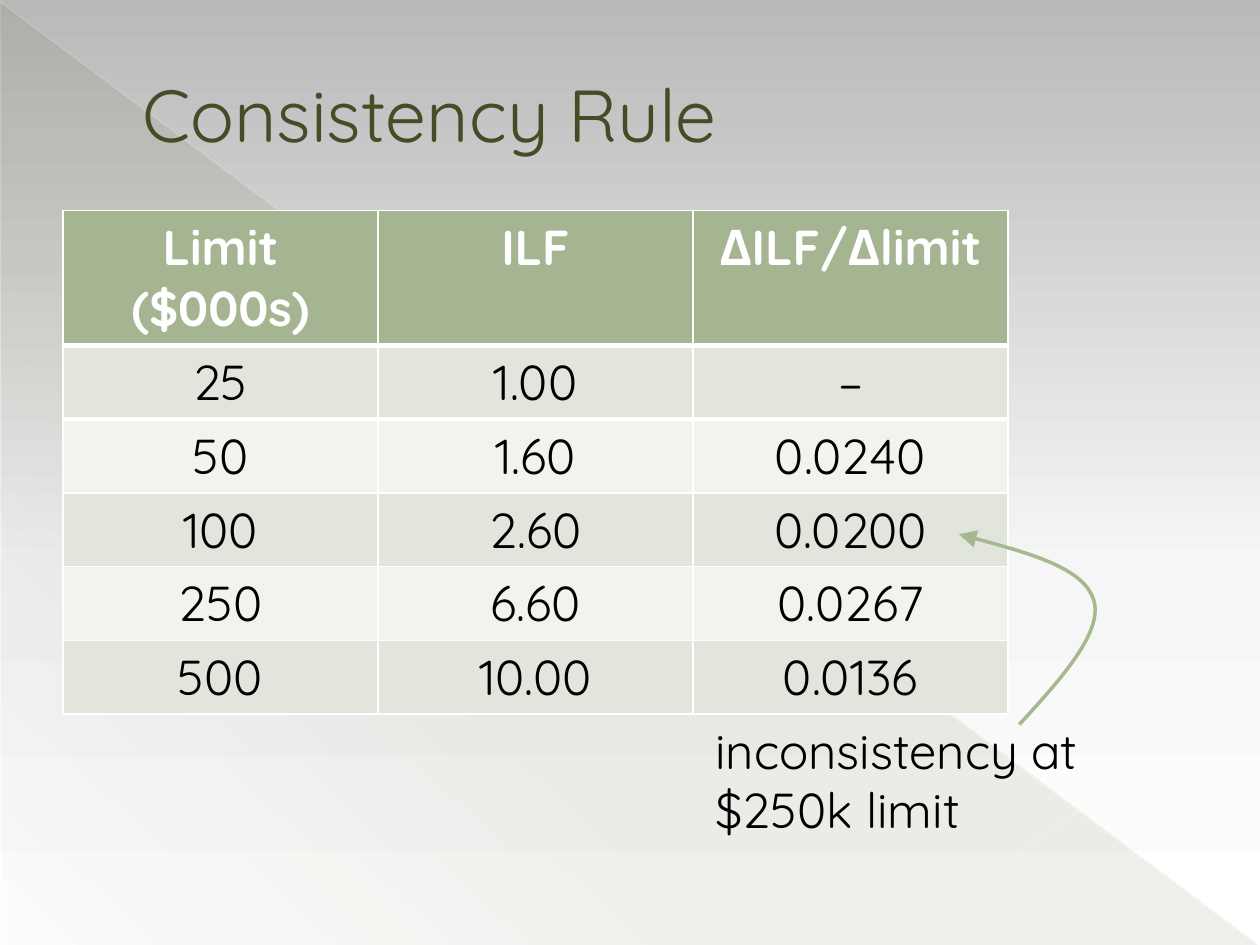
from lxml.etree import SubElement
from pptx import Presentation
from pptx.dml.color import RGBColor
from pptx.enum.shapes import MSO_CONNECTOR, MSO_SHAPE
from pptx.enum.text import MSO_ANCHOR, MSO_AUTO_SIZE, PP_ALIGN
from pptx.oxml.ns import qn
from pptx.util import Inches, Pt

FONT = "Quicksand"
OLIVE, SAGE, BLACK, WHITE = "444D26", "A5B592", "000000", "FFFFFF"
BANDS = ["E1E5DC", "F0F3EE"]
ROWS = [
    ["Limit ($000s)", "ILF", "ΔILF/Δlimit"],
    ["25", "1.00", "–"],
    ["50", "1.60", "0.0240"],
    ["100", "2.60", "0.0200"],
    ["250", "6.60", "0.0267"],
    ["500", "10.00", "0.0136"],
]


def color(hex_string):
    return RGBColor.from_string(hex_string)


def add_run(paragraph, text, size, hex_string, bold=False):
    run = paragraph.add_run()
    run.text = text
    run.font.name = FONT
    run.font.size = Pt(size)
    run.font.bold = bold
    run.font.color.rgb = color(hex_string)


def set_alpha(color_element, percent):
    SubElement(color_element, qn("a:alpha"), val=str(percent * 1000))


def set_gradient(fill, parent, stops, angle):
    fill.solid()
    fill.fore_color.rgb = color(WHITE)
    solid = parent.find(qn("a:solidFill"))
    gradient = parent.makeelement(qn("a:gradFill"), {"rotWithShape": "1"})
    stop_list = SubElement(gradient, qn("a:gsLst"))
    for position, hex_string, opacity in stops:
        stop = SubElement(stop_list, qn("a:gs"), pos=str(position * 1000))
        set_alpha(SubElement(stop, qn("a:srgbClr"), val=hex_string), opacity)
    SubElement(gradient, qn("a:lin"), ang=str(angle * 60000), scaled="0")
    parent.replace(solid, gradient)


def add_hairline(slide, start, end, hex_string, width, opacity):
    ends = [Inches(value) for value in (*start, *end)]
    hairline = slide.shapes.add_connector(MSO_CONNECTOR.STRAIGHT, *ends)
    hairline.line.width = Pt(width)
    hairline.line.color.rgb = color(hex_string)
    properties = hairline._element.spPr
    set_alpha(next(properties.iter(qn("a:srgbClr"))), opacity)
    SubElement(properties, qn("a:effectLst"))


def add_backdrop(slide, width, height):
    fill = slide.background.fill
    fill.solid()
    background = next(slide._element.iter(qn("p:bgPr")))
    set_gradient(fill, background,
                 [(0, "B9B9B9", 100), (60, "F6F6F6", 100), (100, WHITE, 100)], 90)
    wedge = slide.shapes.add_shape(
        MSO_SHAPE.RIGHT_TRIANGLE, Inches(0.01), Inches(0.02),
        Inches(width - 0.02), Inches(height - 0.02))
    wedge.shadow.inherit = False
    wedge.line.fill.background()
    set_gradient(wedge.fill, wedge._element.spPr,
                 [(0, OLIVE, 10), (70, OLIVE, 8), (100, OLIVE, 1)], 133)
    add_hairline(slide, (0, 0.01), (width - 0.01, height - 0.01), "FFFDE3", 0.39, 35)
    add_hairline(slide, (width, 5.41), (7.07, height - 0.01), "FFFDE6", 0.47, 45)


def set_border(cell, side, width):
    properties = cell._tc.get_or_add_tcPr()
    border = properties.makeelement(qn(f"a:{side}"), {"w": str(Pt(width))})
    SubElement(SubElement(border, qn("a:solidFill")), qn("a:srgbClr"), val=WHITE)
    properties.insert(0, border)


def add_factor_table(slide, left, top, width, height):
    frame = slide.shapes.add_table(
        len(ROWS), len(ROWS[0]), Inches(left), Inches(top), Inches(width), Inches(height))
    table = frame.table
    for row in table.rows:
        row.height = Inches(0.41)
    frame.height = Inches(height)
    for row_index, values in enumerate(ROWS):
        header = row_index == 0
        for column_index, value in enumerate(values):
            cell = table.cell(row_index, column_index)
            cell.fill.solid()
            cell.fill.fore_color.rgb = color(SAGE if header else BANDS[(row_index - 1) % 2])
            if row_index < 2:
                set_border(cell, "lnB" if header else "lnT", 3)
            paragraph = cell.text_frame.paragraphs[0]
            paragraph.alignment = PP_ALIGN.CENTER
            add_run(paragraph, value, 28, WHITE if header else BLACK, header)


def place_title(slide, left, top, width, height):
    title = slide.shapes.title
    title.left, title.top = Inches(left), Inches(top)
    title.width, title.height = Inches(width), Inches(height)
    title.text_frame.vertical_anchor = MSO_ANCHOR.MIDDLE
    paragraph = title.text_frame.paragraphs[0]
    paragraph.alignment = PP_ALIGN.LEFT
    properties = paragraph._p.get_or_add_pPr()
    properties.set("marL", str(Inches(0.53)))
    properties.set("indent", "0")
    add_run(paragraph, "Consistency Rule", 42, OLIVE)
    slide.shapes._spTree.append(title._element)


def add_remark(slide, left, top, width, height):
    remark = slide.shapes.add_textbox(
        Inches(left), Inches(top), Inches(width), Inches(height))
    remark.text_frame.word_wrap = True
    remark.text_frame.auto_size = MSO_AUTO_SIZE.SHAPE_TO_FIT_TEXT
    add_run(remark.text_frame.paragraphs[0], "inconsistency at $250k limit", 28, BLACK)


def add_curved_arrow(slide, *points):
    start, *controls = [(Inches(x), Inches(y)) for x, y in points]
    builder = slide.shapes.build_freeform(*start, scale=1.0)
    builder.add_line_segments(controls, close=False)
    arrow = builder.convert_to_shape()
    arrow.shadow.inherit = False
    arrow.fill.background()
    arrow.line.width = Pt(2)
    arrow.line.color.rgb = color("A5B88E")
    SubElement(arrow.line._get_or_add_ln(), qn("a:tailEnd"),
               type="triangle", w="lg", len="lg")
    segments = list(arrow._element.iter(qn("a:lnTo")))
    outline = segments[0].getparent()
    for index in range(0, len(segments), 3):
        curve = SubElement(outline, qn("a:cubicBezTo"))
        for segment in segments[index:index + 3]:
            curve.append(segment[0])
            outline.remove(segment)


def main():
    width, height = 10, 7.5
    deck = Presentation()
    deck.slide_width, deck.slide_height = Inches(width), Inches(height)
    slide = deck.slides.add_slide(deck.slide_layouts[5])
    add_backdrop(slide, width, height)
    add_factor_table(slide, 0.5, 1.67, width * 0.75, 3.4)
    place_title(slide, 0.5, 0.29, width * 0.9, 1.21)
    add_remark(slide, 5.58, 5.67, 3.08, 1.04)
    add_curved_arrow(slide, (8.09, 5.75), (8.43, 5.38), (8.76, 5.01), (8.68, 4.76),
                     (8.6, 4.51), (8.11, 4.37), (7.61, 4.24))
    deck.save("out.pptx")


if __name__ == "__main__":
    main()
